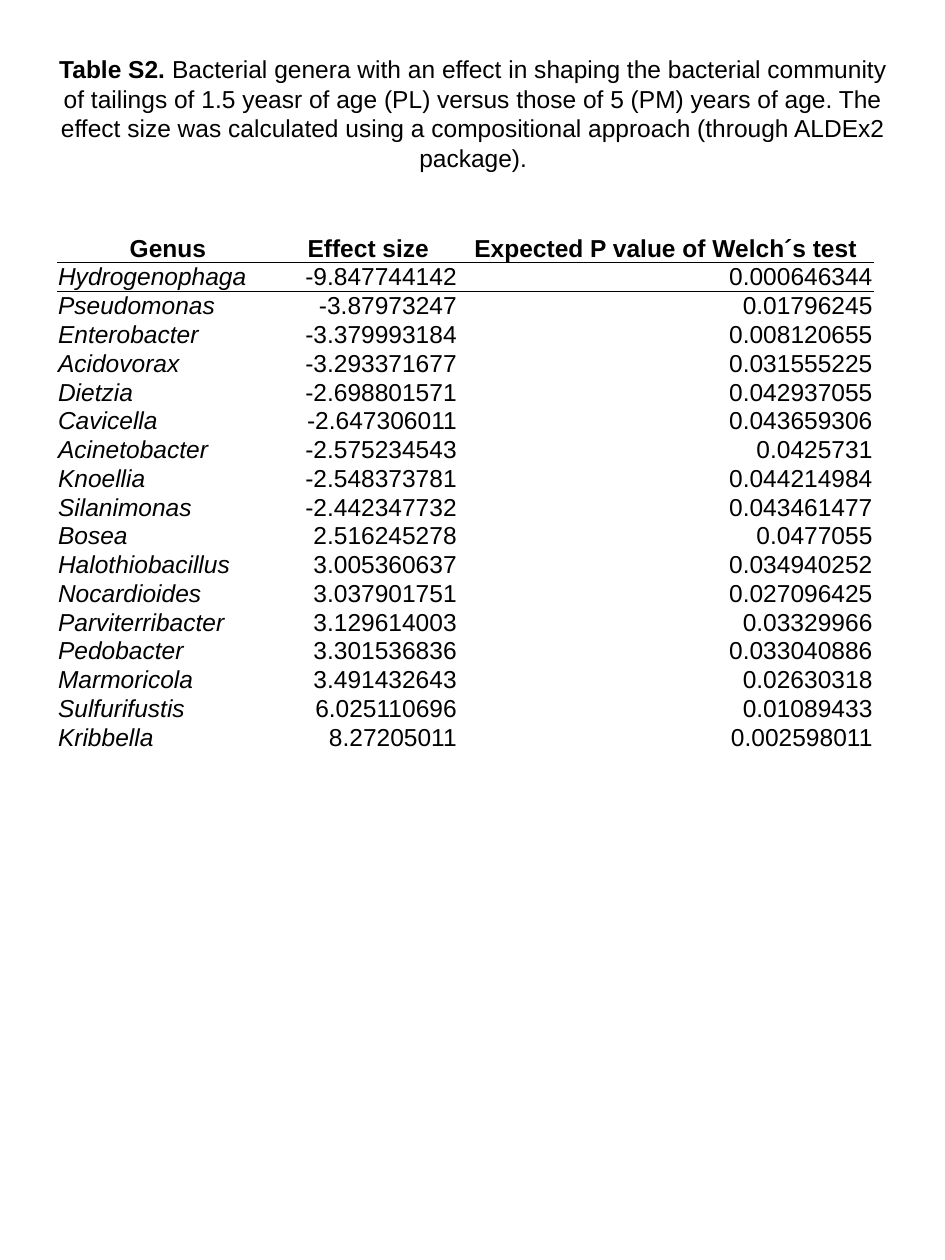
"""Build the slide with Table S2: bacterial genera and their effect sizes."""
from dataclasses import dataclass

from lxml import etree
from pptx import Presentation, util as u
from pptx.dml.color import RGBColor
from pptx.enum import text as t
from pptx.oxml import ns

INK = "000000"
FONT = "Arial"
SIZE = 14
PLAIN = "{2D5ABB26-0587-4C30-8999-92F81FD0307C}"
WIDTHS = (4.47, 3.61, 8.38)
HEAD = ("Genus", "Effect size", "Expected P value of Welch´s test")
LEFT, MID, RIGHT = t.PP_ALIGN.LEFT, t.PP_ALIGN.CENTER, t.PP_ALIGN.RIGHT


@dataclass
class Run:
    text: str
    bold: bool = False
    slant: bool = False


@dataclass
class Genus:
    name: str
    effect: str
    prob: str


ROWS = [
    Genus("Hydrogenophaga", "-9.847744142", "0.000646344"),
    Genus("Pseudomonas", "-3.87973247", "0.01796245"),
    Genus("Enterobacter", "-3.379993184", "0.008120655"),
    Genus("Acidovorax", "-3.293371677", "0.031555225"),
    Genus("Dietzia", "-2.698801571", "0.042937055"),
    Genus("Cavicella", "-2.647306011", "0.043659306"),
    Genus("Acinetobacter", "-2.575234543", "0.0425731"),
    Genus("Knoellia", "-2.548373781", "0.044214984"),
    Genus("Silanimonas", "-2.442347732", "0.043461477"),
    Genus("Bosea", "2.516245278", "0.0477055"),
    Genus("Halothiobacillus", "3.005360637", "0.034940252"),
    Genus("Nocardioides", "3.037901751", "0.027096425"),
    Genus("Parviterribacter", "3.129614003", "0.03329966"),
    Genus("Pedobacter", "3.301536836", "0.033040886"),
    Genus("Marmoricola", "3.491432643", "0.02630318"),
    Genus("Sulfurifustis", "6.025110696", "0.01089433"),
    Genus("Kribbella", "8.27205011", "0.002598011"),
]

TITLE = [
    Run("Table S2. ", bold=True),
    Run("Bacterial genera with an effect in shaping the bacterial community "
        "of tailings of 1.5 yeasr of age (PL) versus those of 5 (PM) years of "
        "age. The effect size was calculated using a compositional approach "
        "(through ALDEx2 package)."),
]


def tint(code: str) -> RGBColor:
    return RGBColor.from_string(code)


def write(frame, runs: list[Run], align) -> None:
    para = frame.paragraphs[0]
    para.alignment = align
    for item in runs:
        run = para.add_run()
        run.text = item.text
        font = run.font
        font.name, font.size = FONT, u.Pt(SIZE)
        font.bold, font.italic = item.bold, item.slant
        font.color.rgb = tint(INK)


def rule(cell, side: str) -> None:
    line = etree.Element(ns.qn(f"a:{side}"), w=str(u.Pt(0.5)))
    fill = etree.SubElement(line, ns.qn("a:solidFill"))
    etree.SubElement(fill, ns.qn("a:srgbClr"), val=INK)
    cell._tc.get_or_add_tcPr().insert(0, line)


def put(cell, run: Run, align) -> None:
    cell.margin_left = cell.margin_right = u.Cm(0.02)
    cell.margin_top, cell.margin_bottom = u.Cm(0.01), 0
    cell.vertical_anchor = t.MSO_ANCHOR.BOTTOM
    cell.fill.background()
    write(cell.text_frame, [run], align)


def draw_table(slide) -> None:
    high = [0.59] + [0.58] * len(ROWS)
    shape = slide.shapes.add_table(
        len(high), len(WIDTHS), u.Cm(1.15), u.Cm(4.7),
        u.Cm(sum(WIDTHS)), u.Cm(sum(high)))
    table = shape.table
    table.horz_banding = False
    table._tbl.tblPr.find(ns.qn("a:tableStyleId")).text = PLAIN
    for col, wide in zip(table.columns, WIDTHS):
        col.width = u.Cm(wide)
    for row, tall in zip(table.rows, high):
        row.height = u.Cm(tall)
    for col, label in enumerate(HEAD):
        put(table.cell(0, col), Run(label, bold=True), MID)
        rule(table.cell(0, col), "lnB")
    for num, item in enumerate(ROWS, 1):
        put(table.cell(num, 0), Run(item.name, slant=True), LEFT)
        put(table.cell(num, 1), Run(item.effect), RIGHT)
        put(table.cell(num, 2), Run(item.prob), RIGHT)
    for col in range(len(HEAD)):
        rule(table.cell(1, col), "lnT")


def draw_title(slide) -> None:
    box = slide.shapes.add_textbox(
        u.Cm(0.74), u.Cm(0.97), u.Cm(17.6), u.Cm(2.64))
    frame = box.text_frame
    frame.word_wrap = True
    frame.auto_size = t.MSO_AUTO_SIZE.SHAPE_TO_FIT_TEXT
    write(frame, TITLE, MID)


def main() -> None:
    deck = Presentation()
    deck.slide_width, deck.slide_height = u.Cm(19.05), u.Cm(25.4)
    slide = deck.slides.add_slide(deck.slide_layouts[6])
    draw_table(slide)
    draw_title(slide)
    deck.save("out.pptx")


if __name__ == "__main__":
    main()
